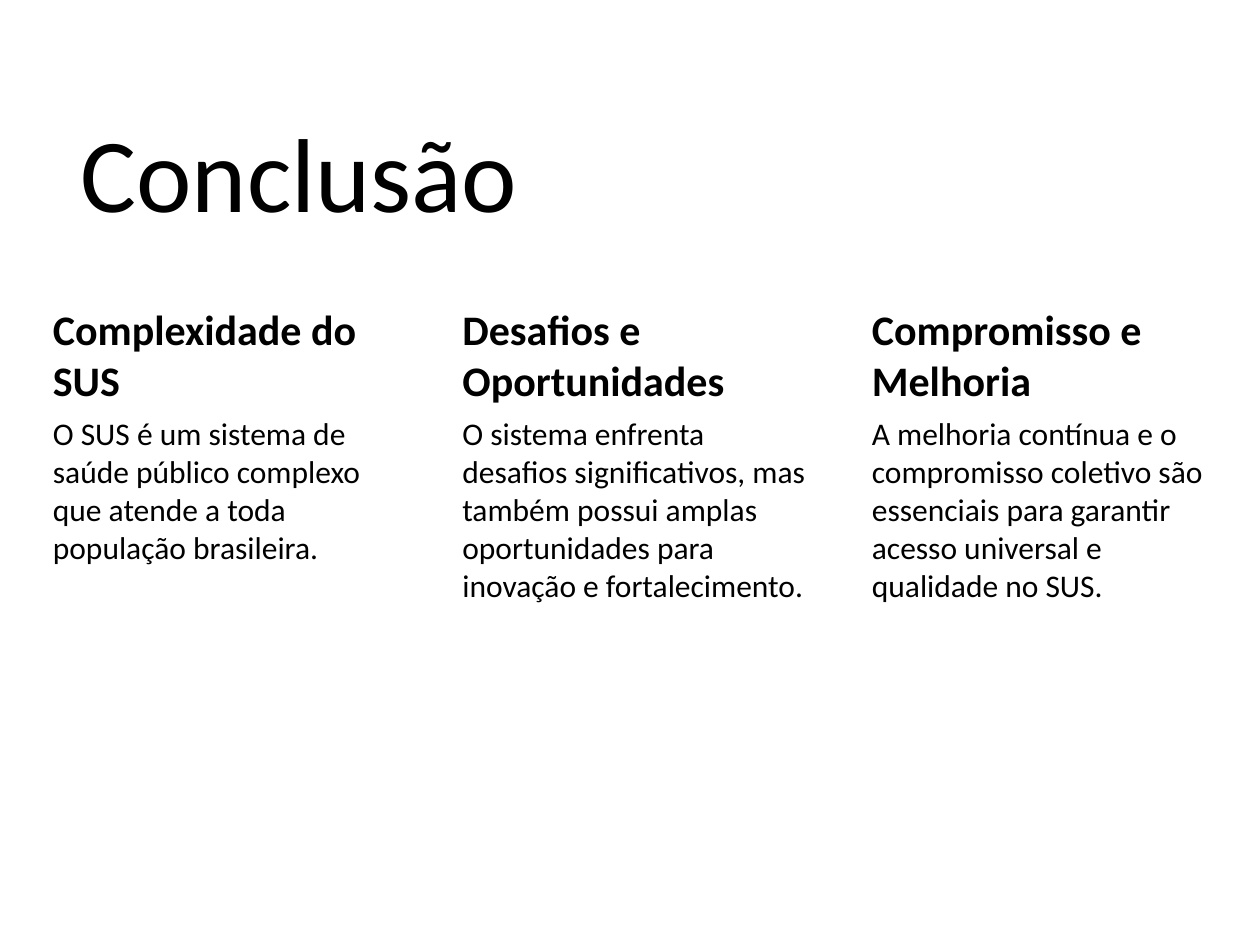
from pptx import Presentation
from pptx.dml.color import RGBColor
from pptx.enum.text import MSO_ANCHOR, PP_ALIGN
from pptx.util import Inches, Pt

BLACK = RGBColor(0, 0, 0)
WHITE = RGBColor(255, 255, 255)

LEFT, STEP, WIDTH = 0.27, 3.25, 2.96
TOP, HEAD, BODY = 2.38, 0.88, 1.87

TOPICS = [
    ("Complexidade do SUS",
     "O SUS é um sistema de saúde público complexo que atende a toda "
     "população brasileira."),
    ("Desafios e Oportunidades",
     "O sistema enfrenta desafios significativos, mas também possui amplas "
     "oportunidades para inovação e fortalecimento."),
    ("Compromisso e Melhoria",
     "A melhoria contínua e o compromisso coletivo são essenciais para "
     "garantir acesso universal e qualidade no SUS."),
]


class Deck:
    font = "Calibri"
    color = BLACK

    def __init__(self, slide):
        self.slide = slide
        fill = slide.background.fill
        fill.solid()
        fill.fore_color.rgb = WHITE

    def set_text(self, frame, text, size, bold=False):
        frame.word_wrap = True
        para = frame.paragraphs[0]
        para.text = text
        para.alignment = PP_ALIGN.LEFT
        font = para.font
        font.name, font.size, font.bold = self.font, Pt(size), bold
        font.color.rgb = self.color
        return para

    def title(self, text, x, y, w, h):
        shape = self.slide.shapes.title
        shape.left, shape.top = Inches(x), Inches(y)
        shape.width, shape.height = Inches(w), Inches(h)
        shape.text_frame.vertical_anchor = MSO_ANCHOR.BOTTOM
        self.set_text(shape.text_frame, text, 60).line_spacing = 0.9

    def label(self, group, text, x, y, w, h, size, bold=False):
        box = group.shapes.add_textbox(Inches(x), Inches(y), Inches(w), Inches(h))
        frame = box.text_frame
        frame.margin_left = Inches(0.15)
        frame.margin_top = frame.margin_right = frame.margin_bottom = Inches(0.03)
        self.set_text(frame, text, size, bold).space_after = Pt(0.35 * size)

    def topic(self, head, body, x):
        """Add a bold heading with its text below, as one group."""
        group = self.slide.shapes.add_group_shape()
        self.label(group, head, x, TOP, WIDTH, HEAD, 24, True)
        self.label(group, body, x, TOP + HEAD, WIDTH, BODY, 18)


def main():
    show = Presentation()
    show.slide_width, show.slide_height = Inches(10), Inches(7.5)
    deck = Deck(show.slides.add_slide(show.slide_layouts[5]))
    deck.title("Conclusão", 0.54, 0.38, 8.93, 1.54)
    for i, (head, body) in enumerate(TOPICS):
        deck.topic(head, body, LEFT + i * STEP)
    show.save("out.pptx")


if __name__ == "__main__":
    main()
